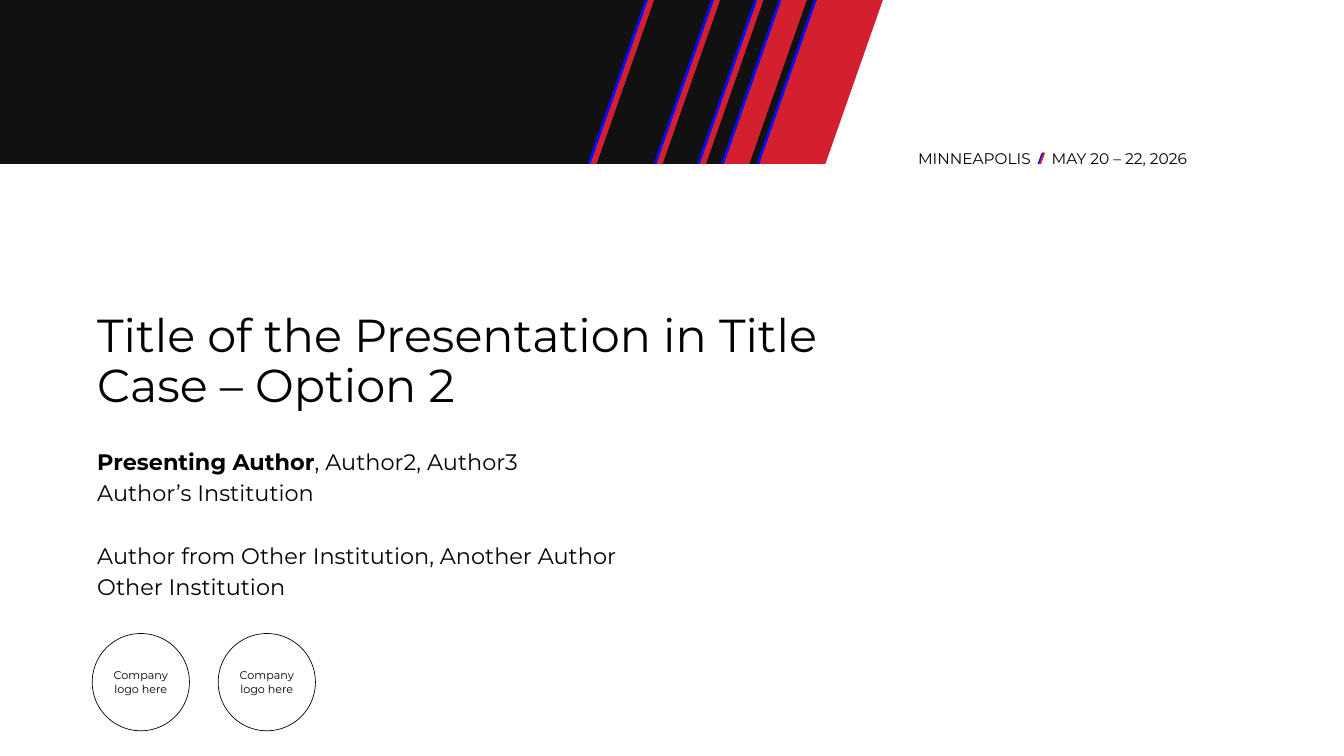
import dataclasses

import pptx
import pptx.dml.color
import pptx.enum.shapes
import pptx.enum.text
import pptx.util

Inches = pptx.util.Inches
Shape = pptx.enum.shapes.MSO_SHAPE
Anchor = pptx.enum.text.MSO_ANCHOR
Align = pptx.enum.text.PP_ALIGN


@dataclasses.dataclass(frozen=True)
class Theme:
    font: str = "Montserrat"
    ink: str = "000000"
    paper: str = "FFFFFF"
    band: str = "111112"
    blue: str = "040BFF"
    red: str = "D41F2E"
    title_size: int = 66
    author_size: int = 32
    event_size: int = 22
    logo_size: int = 16


THEME = Theme()


def rgb(value):
    return pptx.dml.color.RGBColor.from_string(value)


def add_block(slide, kind, box, fill, line=None):
    block = slide.shapes.add_shape(kind, *(Inches(length) for length in box))
    block.shadow.inherit = False
    block.fill.solid()
    block.fill.fore_color.rgb = rgb(fill)
    if line:
        block.line.color.rgb = rgb(line)
        block.line.width = pptx.util.Pt(1)
    else:
        block.line.fill.background()
    return block


def add_span(para, text, size, bold=False):
    span = para.add_run()
    span.text = text
    span.font.name = THEME.font
    span.font.size = pptx.util.Pt(size)
    span.font.bold = bold
    span.font.color.rgb = rgb(THEME.ink)


def add_text_box(slide, box, anchor=Anchor.TOP):
    frame = slide.shapes.add_textbox(*(Inches(length) for length in box)).text_frame
    frame.word_wrap = True
    frame.vertical_anchor = anchor
    return frame


def add_slash(slide, box, slant, fill):
    """A parallelogram whose top edge leans right by slant inches."""
    slash = add_block(slide, Shape.PARALLELOGRAM, box, fill)
    slash.adjustments[0] = slant / min(box[2], box[3])


def add_banner(slide, box):
    left, top, width, height = box
    slant, edge, narrow = 1.14, 0.06, 1.26
    add_block(slide, Shape.RECTANGLE, box, THEME.band)
    # Each stripe is a blue edge under a red slash: offset, red width
    stripes = [(13.83, narrow), (15.01, 2.45), (14.31, 1.64),
               (12.97, narrow), (11.66, narrow)]
    for offset, red_width in stripes:
        add_slash(slide, (left + offset, top, narrow, height), slant, THEME.blue)
        add_slash(slide, (left + offset + edge, top, red_width, height), slant, THEME.red)


def add_event_line(slide, box):
    left, top, width, height = box
    date_offset = 2.65
    labels = [("MINNEAPOLIS", 0, 2.53),
              ("MAY 20 – 22, 2026", date_offset, width - date_offset)]
    for text, offset, label_width in labels:
        frame = add_text_box(slide, (left + offset, top, label_width, height))
        add_span(frame.paragraphs[0], text, THEME.event_size)
    # Divider between place and date
    for offset, fill in ((2.47, THEME.blue), (2.5, THEME.red)):
        add_slash(slide, (left + offset, top + 0.12, 0.12, 0.22), 0.08, fill)


def add_title(slide, box):
    para = add_text_box(slide, box, Anchor.BOTTOM).paragraphs[0]
    para.line_spacing = 0.9
    add_span(para, "Title of the Presentation in Title Case – Option 2", THEME.title_size)


def add_authors(slide, box):
    frame = add_text_box(slide, box)
    # Space before in points, then (text, bold) spans
    lines = [
        (0, [("Presenting Author", True), (", Author2, Author3", False)]),
        (10, [("Author’s Institution", False)]),
        (55, [("Author from Other Institution, Another Author", False)]),
        (10, [("Other Institution", False)]),
    ]
    for index, (gap, spans) in enumerate(lines):
        para = frame.add_paragraph() if index else frame.paragraphs[0]
        para.line_spacing = 0.9
        para.space_before = pptx.util.Pt(gap)
        for text, bold in spans:
            add_span(para, text, THEME.author_size, bold)


def add_logo_spots(slide, box, count=2):
    left, top, width, size = box
    step = (width - size) / (count - 1)
    for index in range(count):
        spot = add_block(slide, Shape.OVAL, (left + index * step, top, size, size),
                         THEME.paper, THEME.ink)
        frame = spot.text_frame
        frame.word_wrap = True
        frame.vertical_anchor = Anchor.MIDDLE
        para = frame.paragraphs[0]
        para.alignment = Align.CENTER
        add_span(para, "Company logo here", THEME.logo_size)


def main():
    deck = pptx.Presentation()
    deck.slide_width = Inches(26.67)
    deck.slide_height = Inches(15)
    page = deck.slides.add_slide(deck.slide_layouts[6])
    margin, text_width = 1.83, 15.52

    add_banner(page, (0, 0, 16.27, 3.25))
    add_event_line(page, (18.12, 2.91, 5.73, 0.47))
    add_title(page, (margin, 5.33, text_width, 2.9))
    add_authors(page, (margin, 8.9, text_width, 3.23))
    add_logo_spots(page, (margin, 12.57, 4.43, 1.93))
    deck.save("out.pptx")


if __name__ == "__main__":
    main()
